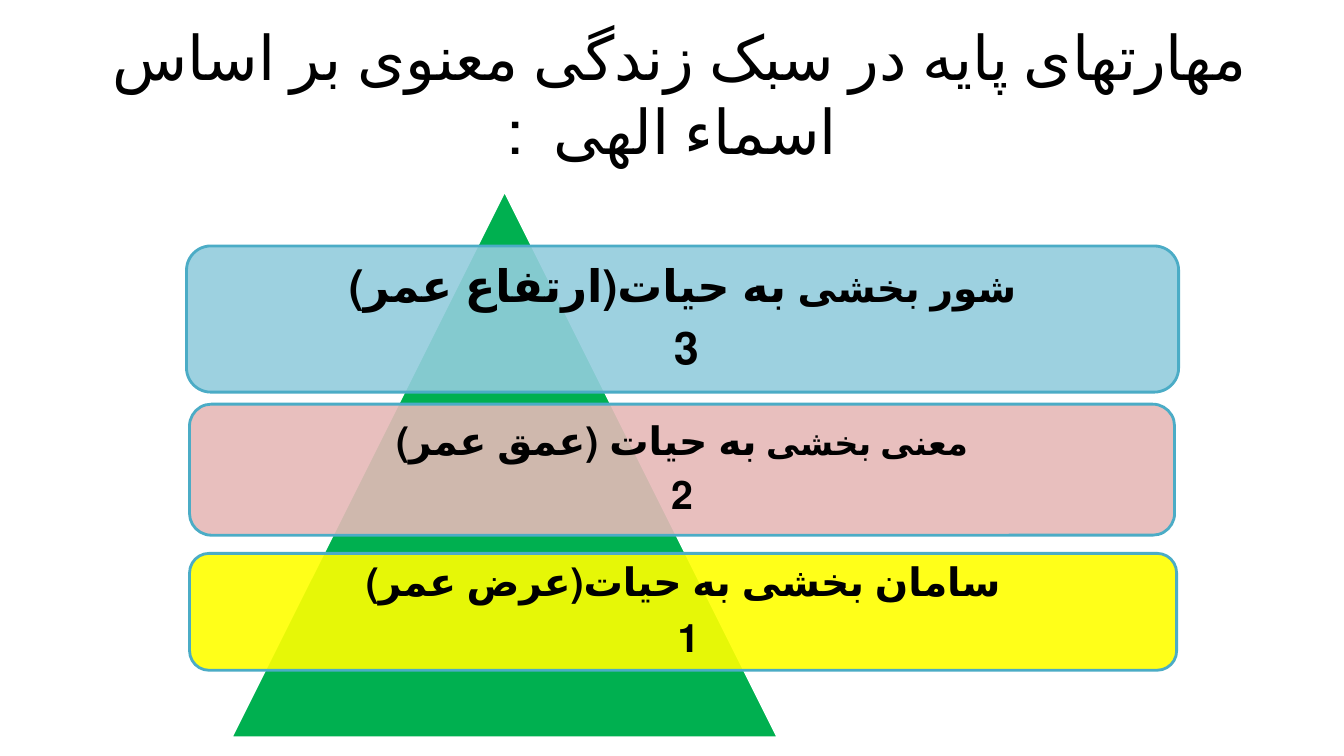
from lxml.etree import SubElement
from pptx import Presentation
from pptx.dml.color import RGBColor
from pptx.enum.lang import MSO_LANGUAGE_ID
from pptx.enum.shapes import MSO_SHAPE
from pptx.enum.text import MSO_ANCHOR, PP_ALIGN
from pptx.oxml.ns import qn
from pptx.util import Emu, Pt

FONT, INK, EDGE = "Calibri", "000000", "4BACC6"
TITLE = "مهارتهای پایه در سبک زندگی معنوی بر اساس  اسماء الهی  :"

# Box, fill, inset, then the lines as (text, size) runs
BARS = [
    ((185, 244, 984, 145), "93CDDD", 12,
     [[("شور بخشی ", 28), ("به حیات(ارتفاع عمر)", 32)], [("3", 32), (" ", 19)]]),
    ((188, 401, 977, 130), "E6B9B8", 10,
     [[("معنی بخشی ", 24), ("به حیات (عمق عمر)", 28)], [("2", 28)]]),
    ((188, 549, 979, 116), "FFFF00", 12,
     [[("سامان بخشی به حیات(عرض عمر)", 28)], [("1 ", 28)]]),
]


def px(n):
    return Emu(n * 9144)


def color(code):
    return RGBColor.from_string(code)


def add_run(para, text, size, bold=False):
    run = para.add_run()
    run.text = text
    font = run.font
    font.name, font.size, font.bold = FONT, Pt(size), bold
    font.language_id = MSO_LANGUAGE_ID.FARSI
    font.color.rgb = color(INK)


def set_para(para):
    para.alignment = PP_ALIGN.CENTER
    para._p.get_or_add_pPr().set("rtl", "1")


def set_frame(frame, pad_x, pad_y):
    frame.word_wrap = True
    frame.vertical_anchor = MSO_ANCHOR.MIDDLE
    frame.margin_left = frame.margin_right = px(pad_x)
    frame.margin_top = frame.margin_bottom = px(pad_y)


def add_form(slide, kind, box, fill, edge):
    form = slide.shapes.add_shape(kind, *map(px, box))
    form.shadow.inherit = False
    form.fill.solid()
    form.fill.fore_color.rgb = color(fill)
    form.line.color.rgb = color(edge)
    form.line.width = Pt(2)
    return form


def add_title(slide, box):
    frame = slide.shapes.add_textbox(*map(px, box)).text_frame
    set_frame(frame, 10, 5)
    para = frame.paragraphs[0]
    set_para(para)
    add_run(para, TITLE, 44)


def add_bar(slide, box, fill, pad, lines):
    bar = add_form(slide, MSO_SHAPE.ROUNDED_RECTANGLE, box, fill, EDGE)
    # Let the triangle show through
    tint = bar.fill._xPr.find(qn("a:solidFill"))[0]
    SubElement(tint, qn("a:alpha")).set("val", "90000")
    frame = bar.text_frame
    set_frame(frame, pad, pad)
    for i, runs in enumerate(lines):
        para = frame.add_paragraph() if i else frame.paragraphs[0]
        set_para(para)
        para.line_spacing = 0.9
        para.space_after = Pt(round(0.35 * runs[0][1]))
        for text, size in runs:
            add_run(para, text, size, True)


def add_pyramid(slide, box):
    add_form(slide, MSO_SHAPE.ISOSCELES_TRIANGLE, box, "00B050", "FFFFFF")
    for bar in BARS:
        add_bar(slide, *bar)


def main():
    deck = Presentation()
    deck.slide_width, deck.slide_height = px(1333), px(750)
    slide = deck.slides.add_slide(deck.slide_layouts[6])
    add_title(slide, (67, 30, 1200, 125))
    add_pyramid(slide, (229, 189, 543, 543))
    deck.save("out.pptx")


if __name__ == "__main__":
    main()
